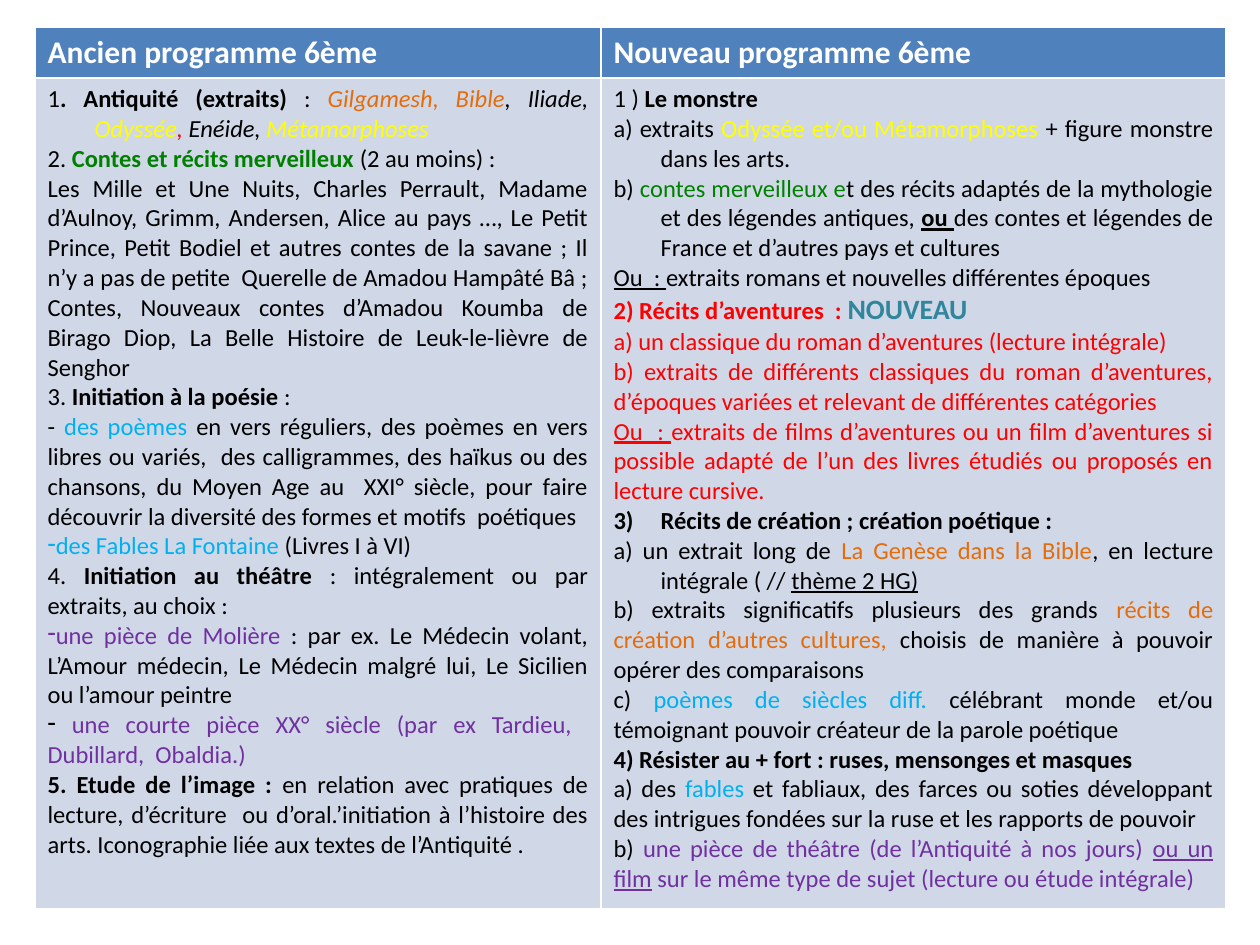
from lxml import etree
from pptx import Presentation
from pptx import util as u
from pptx.dml.color import RGBColor
from pptx.enum import text
from pptx.oxml import ns

PX = 914400 / 126
FONT = "Calibri"
WHITE = RGBColor(0xFF, 0xFF, 0xFF)
BLACK = RGBColor(0x00, 0x00, 0x00)
HEADER_BLUE = RGBColor(0x4F, 0x81, 0xBD)
BODY_BLUE = RGBColor(0xD0, 0xD8, 0xE8)
ORANGE = RGBColor(0xE4, 0x6C, 0x0A)
YELLOW = RGBColor(0xFF, 0xFF, 0x00)
RED = RGBColor(0xFF, 0x00, 0x00)
GREEN = RGBColor(0x00, 0x80, 0x00)
SKY = RGBColor(0x00, 0xB0, 0xF0)
PURPLE = RGBColor(0x70, 0x30, 0xA0)
TEAL = RGBColor(0x31, 0x85, 0x9C)

HANGING = {"hanging": 47}
DASH = {"bullet": ("buChar", {"char": "-"})}
THIRD = {"hanging": 47, "bullet": ("buAutoNum", {"type": "arabicParenR", "startAt": "3"})}
PLAIN = {}


def run(words, color=BLACK, bold=False, italic=False, underline=False, size=14):
    return words, color, bold, italic, underline, size


def strong(words, color=BLACK, **style):
    return run(words, color, bold=True, **style)


def slanted(words, color=BLACK):
    return run(words, color, italic=True)


def underlined(words, color=BLACK):
    return run(words, color, underline=True)


OLD_PROGRAMME = [
    (HANGING, [run("1"), strong(". Antiquité (extraits) "), run(": "),
               slanted("Gilgamesh, Bible", ORANGE), slanted(", Iliade, "),
               slanted("Odyssée", YELLOW), slanted(", ", RED),
               slanted("Enéide, "), slanted("Métamorphoses", YELLOW)]),
    (PLAIN, [run("2. "), strong("Contes et récits merveilleux ", GREEN), run("(2 au moins) :")]),
    (PLAIN, [run("Les Mille et Une Nuits, Charles Perrault, Madame d’Aulnoy, Grimm, Andersen, "
                 "Alice au pays …, Le Petit Prince, Petit Bodiel et autres contes de la savane ; "
                 "Il n’y a pas de petite  Querelle de Amadou Hampâté Bâ ; Contes, Nouveaux contes "
                 "d’Amadou Koumba de Birago Diop, La Belle Histoire de Leuk-le-lièvre de Senghor")]),
    (PLAIN, [run("3. "), strong("Initiation à la poésie "), run(":")]),
    (PLAIN, [run("- "), run("des poèmes", SKY),
             run(" en vers réguliers, des poèmes en vers libres ou variés,  des calligrammes, "
                 "des haïkus ou des chansons, du Moyen Age au  XXI° siècle, pour faire découvrir "
                 "la diversité des formes et motifs  poétiques ")]),
    (DASH, [run("des Fables La Fontaine ", SKY), run("(Livres I à VI)")]),
    (PLAIN, [run("4. "), strong("Initiation au théâtre "),
             run(": intégralement ou par extraits, au choix : ")]),
    (DASH, [run("une pièce de Molière ", PURPLE),
            run(": par ex. Le Médecin volant, L’Amour médecin, Le Médecin malgré lui, "
                "Le Sicilien ou l’amour peintre")]),
    (DASH, [run(" "), run("une courte pièce XX° siècle (par ex Tardieu,  Dubillard,  Obaldia.)",
                          PURPLE)]),
    (PLAIN, [strong("5. Etude de l’image : "),
             run("en relation avec pratiques de lecture, d’écriture  ou d’oral.’initiation à "
                 "l’histoire des arts. Iconographie liée aux textes de l’Antiquité . ")]),
]

NEW_PROGRAMME = [
    (HANGING, [run("1 ) "), strong("Le monstre ")]),
    (HANGING, [run("a) extraits "), run("Odyssée et/ou Métamorphoses ", YELLOW),
               run("+ figure monstre dans les arts.")]),
    (HANGING, [run("b) "), run("contes merveilleux e", GREEN),
               run("t des récits adaptés de la mythologie et des légendes antiques, "),
               strong("ou ", underline=True),
               run("des contes et légendes de France et d’autres pays et cultures")]),
    (PLAIN, [underlined("Ou  : "), run("extraits romans et nouvelles différentes époques")]),
    (PLAIN, [strong("2) Récits d’aventures  : ", RED), strong("NOUVEAU", TEAL, size=16)]),
    (PLAIN, [run("a) un classique du roman d’aventures (lecture intégrale)", RED)]),
    (PLAIN, [run("b) extraits de différents classiques du roman d’aventures, d’époques variées "
                 "et relevant de différentes catégories", RED)]),
    (PLAIN, [underlined("Ou  : ", RED),
             run("extraits de films d’aventures ou un film d’aventures si possible adapté de "
                 "l’un des livres étudiés ou proposés en lecture cursive.", RED)]),
    (THIRD, [strong("Récits de création ; création poétique :")]),
    (HANGING, [run("a) un extrait long de "), run("La Genèse dans la Bible", ORANGE),
               run(", en lecture intégrale ( // "), underlined("thème 2 HG)")]),
    (PLAIN, [run("b) extraits significatifs plusieurs des grands "),
             run("récits de création d’autres cultures,", ORANGE),
             run(" choisis de manière à pouvoir opérer des comparaisons")]),
    (PLAIN, [run("c) "), run("poèmes de siècles diff. ", SKY),
             run("célébrant monde et/ou témoignant pouvoir créateur de la parole poétique")]),
    (PLAIN, [strong("4) Résister au + fort : ruses, mensonges et masques")]),
    (PLAIN, [run("a) des "), run("fables", SKY),
             run(" et fabliaux, des farces ou soties développant des intrigues fondées sur la "
                 "ruse et les rapports de pouvoir")]),
    (PLAIN, [run("b) "), run("une pièce de théâtre (de l’Antiquité à nos jours) ", PURPLE),
             underlined("ou un film", PURPLE),
             run(" sur le même type de sujet (lecture ou étude intégrale)", PURPLE)]),
]

PROGRAMMES = [
    ("Ancien programme 6ème", 566, OLD_PROGRAMME),
    ("Nouveau programme 6ème", 625, NEW_PROGRAMME),
]


def px(length):
    return u.Emu(round(length * PX))


def format_paragraph(paragraph, hanging=0, bullet=None):
    paragraph.alignment = text.PP_ALIGN.JUSTIFY
    properties = paragraph._p.get_or_add_pPr()
    properties.set("marL", str(px(hanging)))
    properties.set("indent", str(px(-hanging)))
    tag, attributes = bullet or ("buNone", {})
    if bullet:
        etree.SubElement(properties, ns.qn("a:buFontTx"))
    etree.SubElement(properties, ns.qn(f"a:{tag}"), attributes)


def fill_cell(cell, color):
    cell.fill.solid()
    cell.fill.fore_color.rgb = color


def write_header(cell, heading):
    fill_cell(cell, HEADER_BLUE)
    paragraph = cell.text_frame.paragraphs[0]
    paragraph.text = heading
    font = paragraph.font
    font.name, font.size, font.bold = FONT, u.Pt(18), True
    font.color.rgb = WHITE


def write_body(cell, sections):
    fill_cell(cell, BODY_BLUE)
    frame = cell.text_frame
    for index, (layout, runs) in enumerate(sections):
        paragraph = frame.add_paragraph() if index else frame.paragraphs[0]
        format_paragraph(paragraph, **layout)
        for words, color, bold, italic, underline, size in runs:
            part = paragraph.add_run()
            part.text = words
            font = part.font
            font.name, font.size = FONT, u.Pt(size)
            font.bold, font.italic, font.underline = bold, italic, underline
            font.color.rgb = color


def add_comparison(slide, left, top, width, height, header_height):
    table = slide.shapes.add_table(
        2, len(PROGRAMMES), px(left), px(top), px(width), px(height)).table
    table.rows[0].height = px(header_height)
    table.rows[1].height = px(height - header_height)
    for column, (heading, column_width, sections) in enumerate(PROGRAMMES):
        table.columns[column].width = px(column_width)
        write_header(table.cell(0, column), heading)
        write_body(table.cell(1, column), sections)


def main():
    deck = Presentation()
    deck.slide_width, deck.slide_height = px(1260), px(945)
    slide = deck.slides.add_slide(deck.slide_layouts[6])
    add_comparison(slide, 35, 27, 1191, 880, 49)
    deck.save("out.pptx")


if __name__ == "__main__":
    main()
